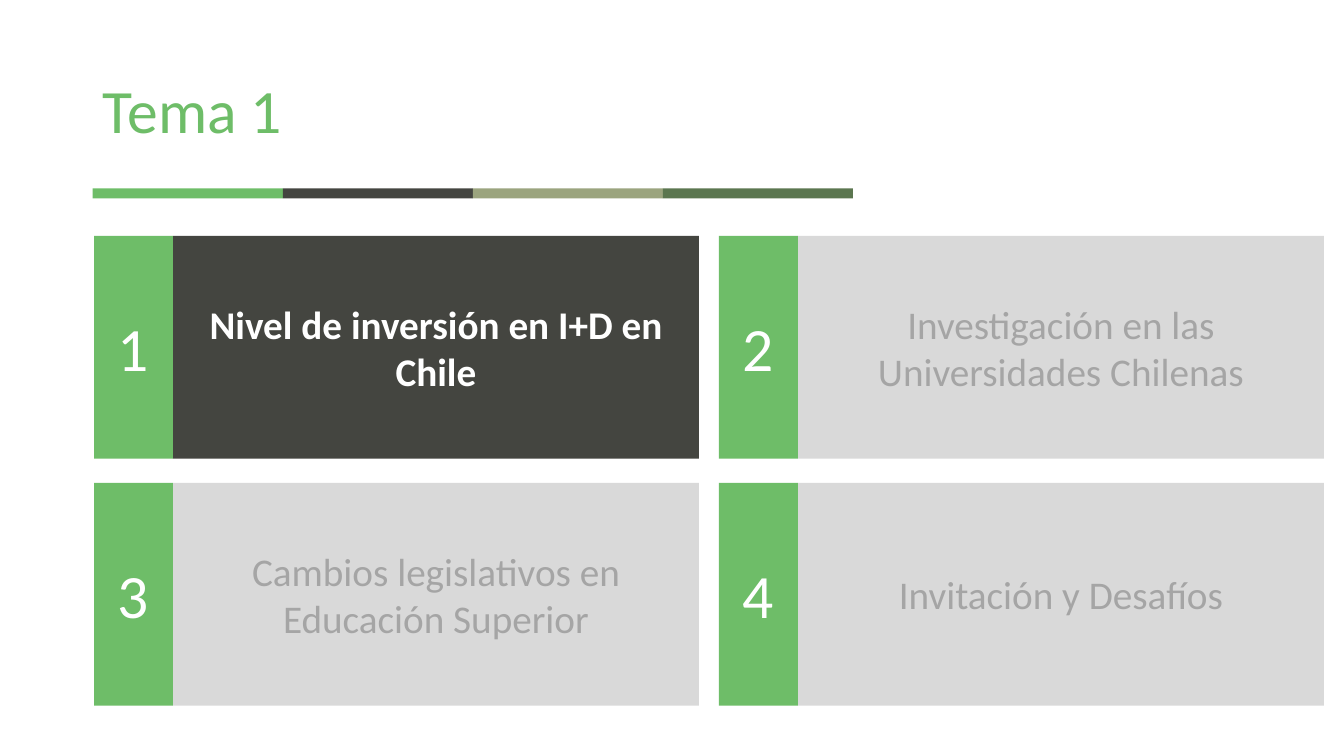
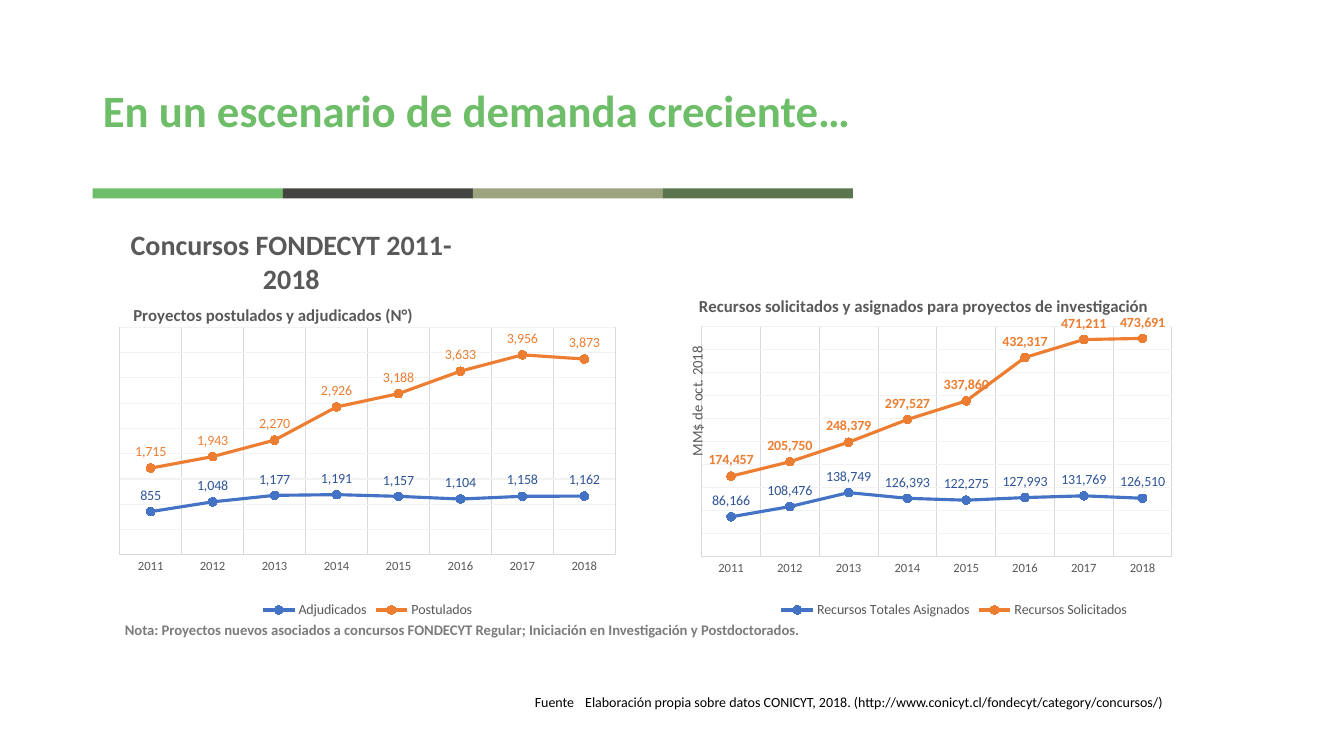
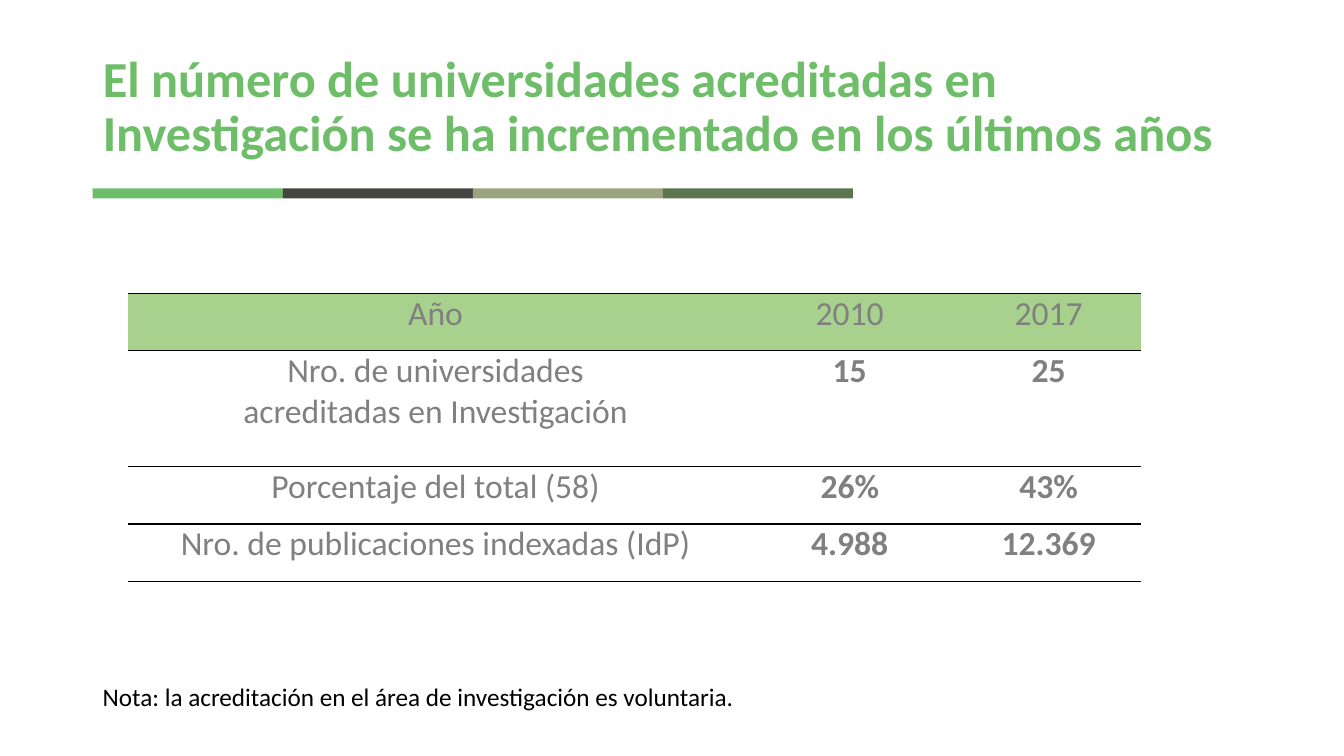
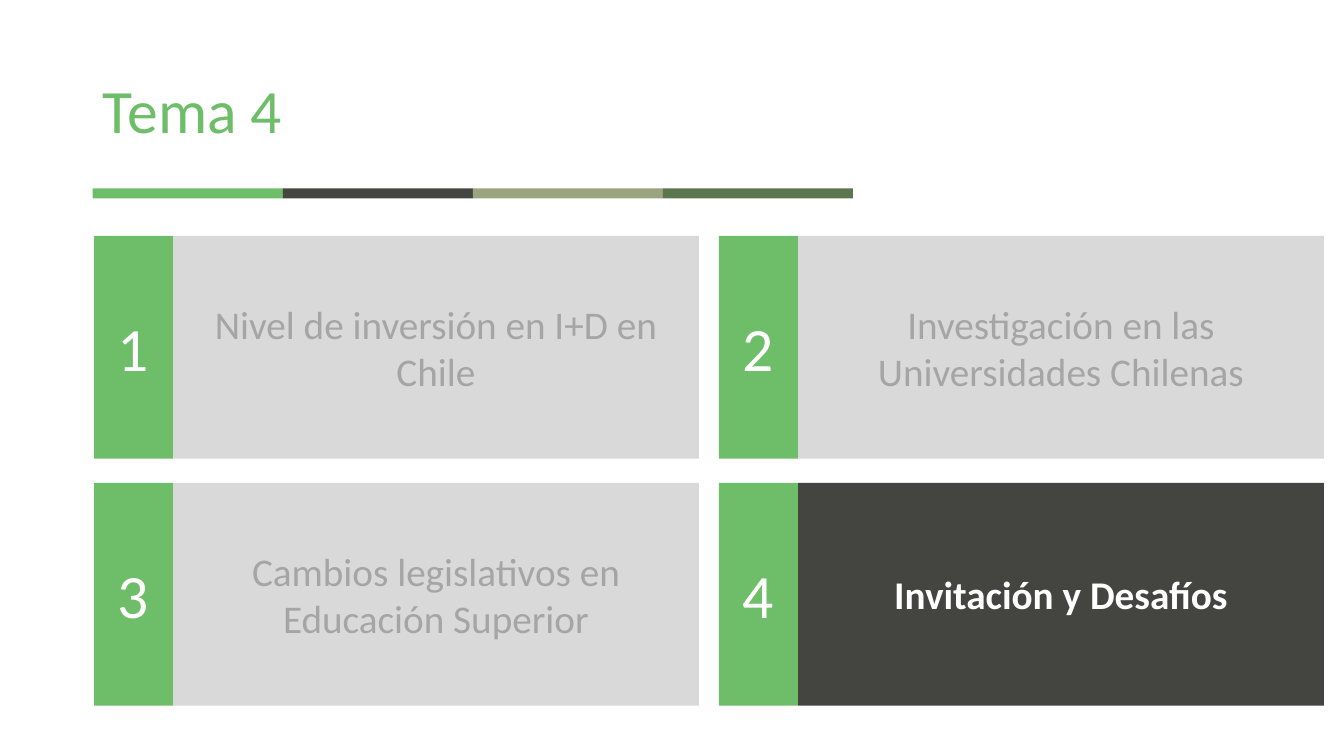
from lxml.etree import SubElement
from pptx import Presentation
from pptx.chart.data import CategoryChartData
from pptx.dml.color import RGBColor
from pptx.enum.chart import (XL_CHART_TYPE, XL_LABEL_POSITION, XL_LEGEND_POSITION,
                             XL_MARKER_STYLE, XL_TICK_LABEL_POSITION, XL_TICK_MARK)
from pptx.enum.shapes import MSO_SHAPE
from pptx.enum.text import MSO_ANCHOR, MSO_AUTO_SIZE, PP_ALIGN
from pptx.oxml import parse_xml
from pptx.oxml.ns import nsdecls, qn
from pptx.util import Inches, Pt

# Style
FONT = "Calibri"
GREEN = RGBColor(0x6E, 0xBD, 0x68)
DARK = RGBColor(0x44, 0x45, 0x40)
OLIVE = RGBColor(0x9B, 0xA4, 0x7E)
FOREST = RGBColor(0x5B, 0x76, 0x4F)
PALE_GREEN = RGBColor(0xA9, 0xD1, 0x8E)
WHITE = RGBColor(0xFF, 0xFF, 0xFF)
BLACK = RGBColor(0x00, 0x00, 0x00)
CARD = RGBColor(0xD9, 0xD9, 0xD9)
CARD_TEXT = RGBColor(0xA5, 0xA5, 0xA5)
GRID = RGBColor(0xF2, 0xF2, 0xF2)
TEXT = RGBColor(0x59, 0x59, 0x59)
NOTE = RGBColor(0x7C, 0x7C, 0x7C)
CELL_TEXT = RGBColor(0x80, 0x80, 0x80)
BLUE = RGBColor(0x44, 0x72, 0xC4)
DARK_BLUE = RGBColor(0x2F, 0x55, 0x97)
ORANGE = RGBColor(0xED, 0x7D, 0x31)
BANDS = [GREEN, DARK, OLIVE, FOREST]
SERIES = [(BLUE, DARK_BLUE), (ORANGE, ORANGE)]

TOPICS = ["Nivel de inversión en I+D en Chile",
          "Investigación en las Universidades Chilenas",
          "Cambios legislativos en Educación Superior",
          "Invitación y Desafíos"]
YEARS = [str(year) for year in range(2018, 2010, -1)]


def style_font(font, size, color=TEXT, bold=False):
    font.name, font.size, font.bold = FONT, Pt(size), bold
    font.color.rgb = color


def set_text(tf, text, size, color, bold=False, align=PP_ALIGN.LEFT):
    tf.text = text
    for p in tf.paragraphs:
        p.alignment = align
        for r in p.runs:
            style_font(r.font, size, color, bold)


def set_layout(parent, x, y, w=None, h=None):
    """Place a chart part by shares of the chart's size."""
    layout = parent.find(qn("c:layout"))
    if layout is None:
        layout = parse_xml(f"<c:layout {nsdecls('c')}/>")
        parent.insert(0 if parent.find(qn("c:tx")) is None else 1, layout)
    manual = SubElement(layout, qn("c:manualLayout"))
    values = [("xMode", "edge"), ("yMode", "edge"), ("x", x), ("y", y)]
    if w is not None:
        values = [("layoutTarget", "inner"), *values, ("w", w), ("h", h)]
    for tag, value in values:
        SubElement(manual, qn(f"c:{tag}")).set("val", str(value))


class Deck:
    """Holds the presentation and current slide; lengths are percent of the slide."""

    def __init__(self):
        self.prs = Presentation()
        self.prs.slide_width, self.prs.slide_height = Inches(13.333), Inches(7.5)

    def x(self, share):
        return round(self.prs.slide_width * share / 100)

    def y(self, share):
        return round(self.prs.slide_height * share / 100)

    def box(self, x, y, w, h):
        return self.x(x), self.y(y), self.x(w), self.y(h)

    def slide(self, title, size=44, bold=False, height=19.33):
        self.s = self.prs.slides.add_slide(self.prs.slide_layouts[5])
        sp = self.s.shapes.title
        sp.left, sp.top, sp.width, sp.height = self.box(6.9, 5.33, 86.25, height)
        tf = sp.text_frame
        tf.auto_size, tf.vertical_anchor = MSO_AUTO_SIZE.NONE, MSO_ANCHOR.MIDDLE
        set_text(tf, title, size, GREEN, bold)
        tf.paragraphs[0].line_spacing = 0.9
        # Four-colour rule below the title
        group = self.s.shapes.add_group_shape()
        for i, color in enumerate(BANDS):
            self.rect(6.9 + i * 14.14, 24.93, 14.14, 1.33, color, group.shapes)

    def rect(self, x, y, w, h, color, shapes=None):
        shapes = self.s.shapes if shapes is None else shapes
        sp = shapes.add_shape(MSO_SHAPE.RECTANGLE, *self.box(x, y, w, h))
        sp.shadow.inherit = False
        sp.fill.solid()
        sp.fill.fore_color.rgb = color
        sp.line.fill.background()
        return sp

    def label_rect(self, x, y, w, h, color, text, size, text_color, bold=False):
        tf = self.rect(x, y, w, h, color).text_frame
        tf.word_wrap, tf.vertical_anchor = True, MSO_ANCHOR.MIDDLE
        set_text(tf, text, size, text_color, bold, PP_ALIGN.CENTER)

    def text(self, x, y, w, h, text, size, color, bold=False, align=PP_ALIGN.LEFT):
        tf = self.s.shapes.add_textbox(*self.box(x, y, w, h)).text_frame
        tf.word_wrap = True
        set_text(tf, text, size, color, bold, align)

    def agenda(self, active):
        """Topic slide: a two by two grid of numbered cards, one highlighted."""
        self.slide(f"Tema {active}")
        badge, card, height = 5.87, 39.13, 29.47
        for i, topic in enumerate(TOPICS):
            row, col = divmod(i, 2)
            x, y = 7 + col * 46.5, 31.2 + row * 32.67
            on = i + 1 == active
            self.label_rect(x + badge, y, card, height, DARK if on else CARD,
                            topic, 28, WHITE if on else CARD_TEXT, on)
            self.label_rect(x, y, badge, height, GREEN, str(i + 1), 44, WHITE)

    def line_chart(self, x, y, w, h, title, series, plot_box, top, step,
                   axis_title=None, bold_labels=(False, False)):
        data = CategoryChartData(number_format="#,##0")
        data.categories = YEARS
        for name, values in series.items():
            data.add_series(name, values)
        chart = self.s.shapes.add_chart(XL_CHART_TYPE.LINE_MARKERS,
                                        *self.box(x, y, w, h), data).chart
        style_font(chart.font, 10, BLACK)
        chart.has_title = True
        set_text(chart.chart_title.text_frame, title, 12, TEXT, True)
        set_layout(chart.chart_title._element, 0.05, 0.04)
        set_layout(chart._chartSpace.chart.plotArea, *plot_box)
        chart.has_legend = True
        chart.legend.position = XL_LEGEND_POSITION.BOTTOM
        chart.legend.include_in_layout = False
        style_font(chart.legend.font, 10)
        # Axes
        cat, val = chart.category_axis, chart.value_axis
        for axis, color in ((cat, CARD), (val, GRID)):
            axis.major_tick_mark = XL_TICK_MARK.NONE
            axis.has_major_gridlines = True
            line = axis.major_gridlines.format.line
            line.color.rgb, line.width = color, Pt(0.75)
            style_font(axis.tick_labels.font, 9)
        cat.reverse_order = True
        cat.format.line.color.rgb, cat.format.line.width = CARD, Pt(0.75)
        val.minimum_scale, val.maximum_scale, val.major_unit = 0, top, step
        val.tick_label_position = XL_TICK_LABEL_POSITION.NONE
        val.format.line.fill.background()
        if axis_title:
            tf = val.axis_title.text_frame
            set_text(tf, axis_title, 10.5, TEXT)
            tf._txBody.bodyPr.set("rot", "-5400000")
            set_layout(val.axis_title._element, 0.03, 0.19)
        # Series
        plot = chart.plots[0]
        plot.vary_by_categories = False
        for ser, (color, label_color), bold in zip(plot.series, SERIES, bold_labels):
            ser.smooth = False
            ser.format.line.color.rgb, ser.format.line.width = color, Pt(2.25)
            marker = ser.marker
            marker.style, marker.size = XL_MARKER_STYLE.CIRCLE, 6
            marker.format.fill.solid()
            marker.format.fill.fore_color.rgb = color
            marker.format.line.color.rgb = color
            labels = ser.data_labels
            labels.show_value, labels.position = True, XL_LABEL_POSITION.ABOVE
            labels.number_format, labels.number_format_is_linked = "#,##0", False
            style_font(labels.font, 10, label_color, bold)

    def table(self, x, y, cols, rows, cells):
        table = self.s.shapes.add_table(len(rows), len(cols), *self.box(
            x, y, sum(cols), sum(rows))).table
        for col, width in zip(table.columns, cols):
            col.width = self.x(width)
        for row, height in zip(table.rows, rows):
            row.height = self.y(height)
        for i, row in enumerate(cells):
            for j, text in enumerate(row):
                cell = table.cell(i, j)
                cell.margin_left = cell.margin_right = Inches(0.07)
                cell.margin_top = cell.margin_bottom = 0
                set_text(cell.text_frame, text, 24, CELL_TEXT,
                         i > 0 and j > 0, PP_ALIGN.CENTER)
                self.cell_borders(cell)
                if i == 0:
                    cell.fill.solid()
                    cell.fill.fore_color.rgb = PALE_GREEN
                else:
                    cell.fill.background()

    @staticmethod
    def cell_borders(cell):
        """Black rules above and below, nothing at the sides."""
        tc_pr = cell._tc.get_or_add_tcPr()
        for side in ("lnL", "lnR", "lnT", "lnB"):
            line = SubElement(tc_pr, qn(f"a:{side}"), w=str(Pt(1)))
            if side in ("lnT", "lnB"):
                fill = SubElement(line, qn("a:solidFill"))
                SubElement(fill, qn("a:srgbClr"), val=str(BLACK))
            else:
                SubElement(line, qn("a:noFill"))


def main():
    deck = Deck()

    # Topic 1
    deck.agenda(1)

    # Growing demand
    deck.slide("En un escenario de demanda creciente…", 32, True)
    deck.text(27.3, 91.07, 59.93, 3.6,
              "Fuente\tElaboración propia sobre datos CONICYT, 2018. "
              "(http://www.conicyt.cl/fondecyt/category/concursos/)",
              10, BLACK, align=PP_ALIGN.RIGHT)
    deck.line_chart(
        7.73, 38, 39.23, 44.27, "Proyectos postulados y adjudicados (N°)",
        {"Adjudicados": [1162, 1158, 1104, 1157, 1191, 1177, 1048, 855],
         "Postulados": [3873, 3956, 3633, 3188, 2926, 2270, 1943, 1715]},
        (0.03, 0.12, 0.94, 0.68), 4500, 500)
    deck.line_chart(
        49.65, 36.8, 42.68, 45.47,
        "Recursos solicitados y asignados para proyectos de investigación",
        {"Recursos Totales Asignados":
            [126510, 131769, 127993, 122275, 126393, 138749, 108476, 86166],
         "Recursos Solicitados":
            [473691, 471211, 432317, 337860, 297527, 248379, 205750, 174457]},
        (0.06, 0.14, 0.82, 0.67), 500000, 50000,
        axis_title="MM$ de oct. 2018", bold_labels=(False, True))
    deck.text(8.18, 29.47, 27, 5.87, "Concursos FONDECYT 2011-2018",
              20, TEXT, True, PP_ALIGN.CENTER)
    deck.text(8.55, 81.47, 58.88, 3.73,
              "Nota: Proyectos nuevos asociados a concursos FONDECYT Regular; "
              "Iniciación en Investigación y Postdoctorados.", 10.5, NOTE, True)

    # Accredited universities
    deck.slide("El número de universidades acreditadas en Investigación "
               "se ha incrementado en los últimos años", 36, True, 18)
    deck.table(9.53, 38.8, [45.75, 15.9, 13.7], [7.6, 15.33, 7.6, 7.6], [
        ["Año", "2010", "2017"],
        ["Nro. de universidades\nacreditadas en Investigación", "15", "25"],
        ["Porcentaje del total (58)", "26%", "43%"],
        ["Nro. de publicaciones indexadas (IdP)", "4.988", "12.369"]])
    deck.text(6.9, 89.47, 51, 5.33,
              "Nota: la acreditación en el área de investigación es voluntaria.",
              18, BLACK)

    # Topic 4
    deck.agenda(4)

    deck.prs.save("out.pptx")


if __name__ == "__main__":
    main()
